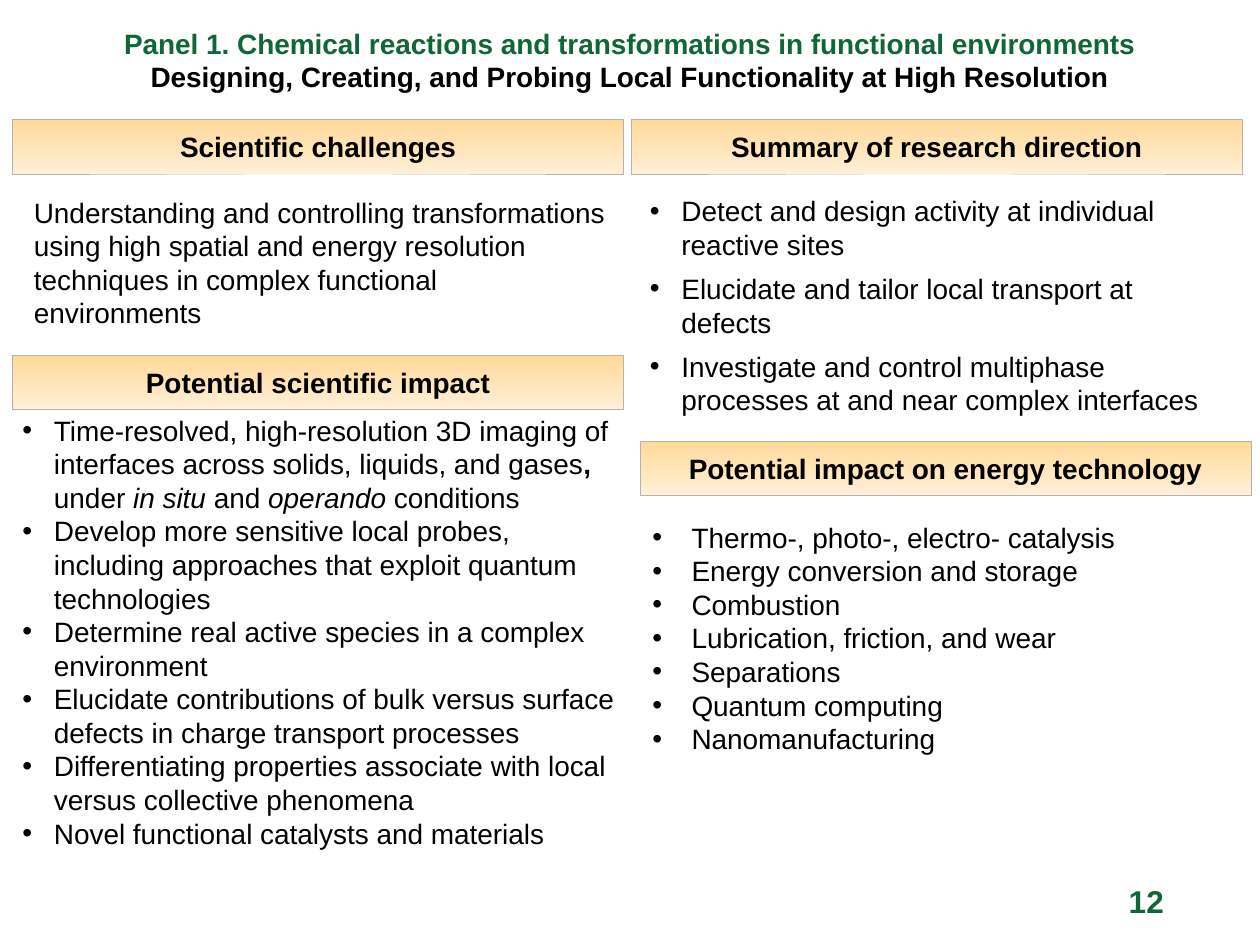
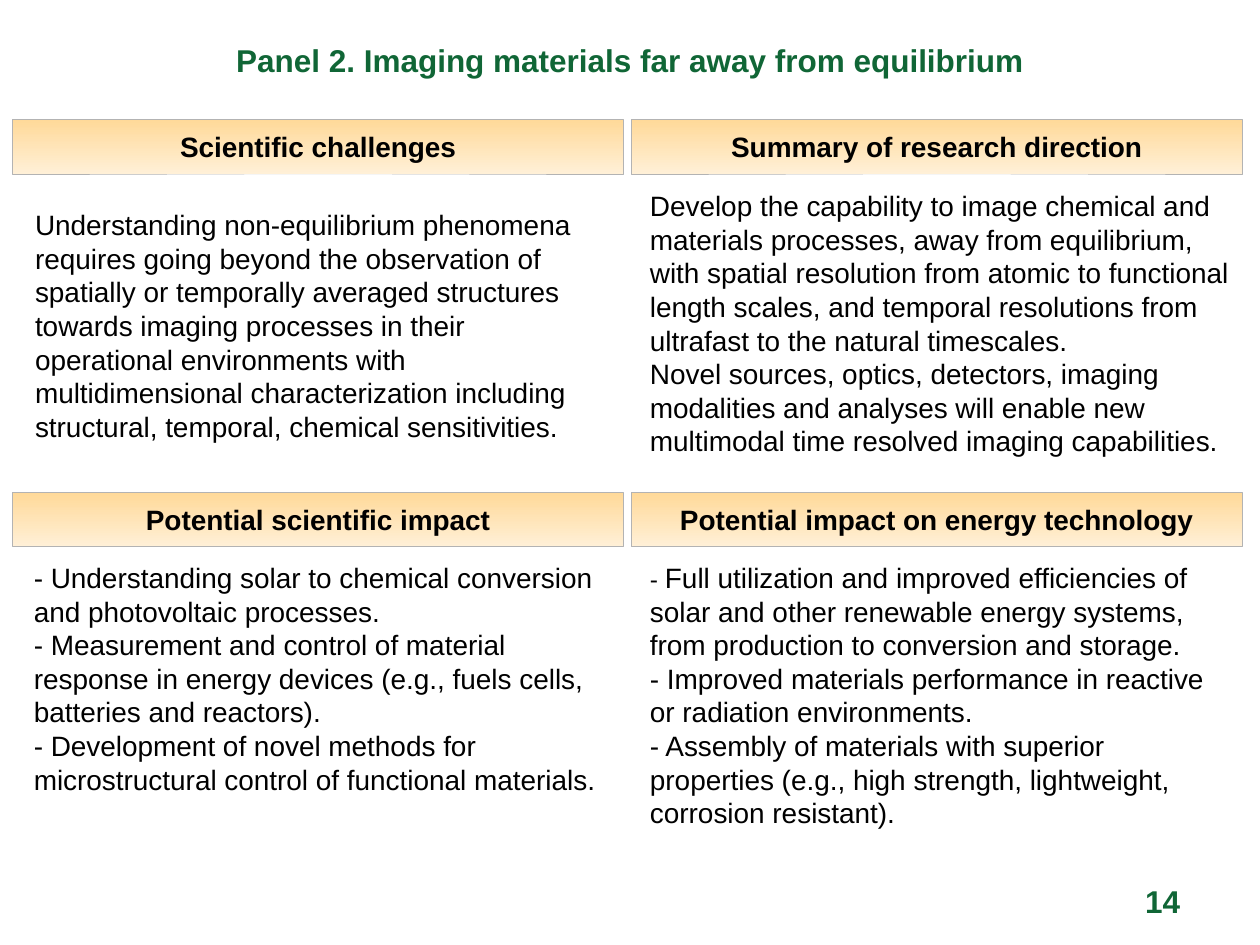
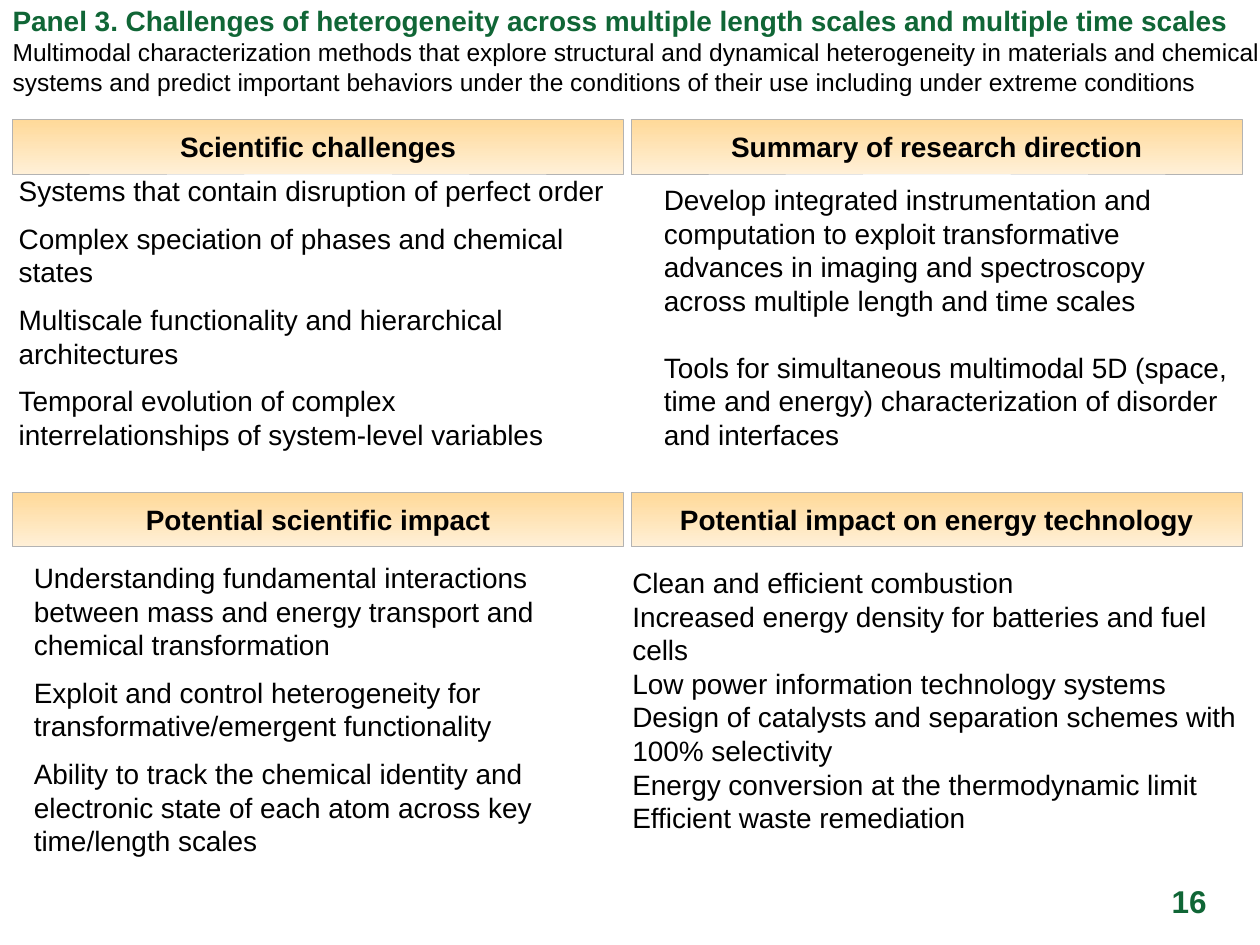
from lxml import etree
from pptx import Presentation
from pptx.dml.color import RGBColor
from pptx.enum.shapes import MSO_SHAPE
from pptx.enum.text import MSO_ANCHOR, MSO_AUTO_SIZE, PP_ALIGN
from pptx.oxml.ns import qn
from pptx.util import Inches, Pt

RECTANGLE = MSO_SHAPE.RECTANGLE
MIDDLE = MSO_ANCHOR.MIDDLE
NO_FIT, GROW = MSO_AUTO_SIZE.NONE, MSO_AUTO_SIZE.SHAPE_TO_FIT_TEXT
LEFT, CENTER = PP_ALIGN.LEFT, PP_ALIGN.CENTER

FONT = "Arial"
BODY_SIZE, SMALL_SIZE, LARGE_SIZE = 16, 14, 18
COLORS = {
    "text": "000000",
    "green": "106636",
    "band_top": "FFD999",
    "band_bottom": "FFF0D7",
    "band_line": "B3B3B3",
}
TITLE_ONLY = 5
LEFT_COLUMN, RIGHT_COLUMN = 0.1, 5.01
TOP_ROW, LOWER_ROW = 0.95, 3.91
BAND_WIDTH, BAND_HEIGHT = 4.85, 0.43
HALF_LINE, FULL_LINE = 8, 19


class PanelDeck:
    """Holds the panel style and the slide being filled."""

    def __init__(self):
        self.presentation = Presentation()
        self.presentation.slide_width = Inches(10)
        self.presentation.slide_height = Inches(7.5)
        self.slide = None

    def color(self, name):
        return RGBColor.from_string(COLORS[name])

    def add_run(self, paragraph, text, size=BODY_SIZE, color="text", bold=False, italic=False):
        run = paragraph.add_run()
        run.text = text
        run.font.name = FONT
        run.font.size = Pt(size)
        run.font.bold = bold
        run.font.italic = italic
        run.font.color.rgb = self.color(color)

    def add_bullet(self, paragraph, indent):
        properties = paragraph._p.get_or_add_pPr()
        properties.set("marL", str(Inches(indent)))
        properties.set("indent", str(-Inches(indent)))
        etree.SubElement(properties, qn("a:buFont")).set("typeface", FONT)
        etree.SubElement(properties, qn("a:buChar")).set("char", "•")

    def start_slide(self, heading, subtitle=None, size=BODY_SIZE, subtitle_style=None,
                    left=0, top=0, width=10, align=CENTER):
        layout = self.presentation.slide_layouts[TITLE_ONLY]
        self.slide = self.presentation.slides.add_slide(layout)
        title = self.slide.shapes.title
        title.left, title.top = Inches(left), Inches(top)
        title.width, title.height = Inches(width), Inches(0.95)
        frame = title.text_frame
        frame.auto_size = NO_FIT
        frame.vertical_anchor = MIDDLE
        paragraph = frame.paragraphs[0]
        paragraph.alignment = align
        self.add_run(paragraph, heading, size, "green", bold=True)
        if subtitle:
            paragraph.add_line_break()
            self.add_run(paragraph, subtitle, **subtitle_style)

    def band(self, text, left, top):
        shape = self.slide.shapes.add_shape(
            RECTANGLE, Inches(left), Inches(top), Inches(BAND_WIDTH), Inches(BAND_HEIGHT))
        shape.shadow.inherit = False
        shape.fill.gradient()
        shape.fill.gradient_angle = 270
        for stop, name in zip(shape.fill.gradient_stops, ("band_top", "band_bottom")):
            stop.color.rgb = self.color(name)
        shape.line.color.rgb = self.color("band_line")
        shape.line.width = Pt(0.25)
        frame = shape.text_frame
        frame.word_wrap = False
        frame.vertical_anchor = MIDDLE
        paragraph = frame.paragraphs[0]
        paragraph.alignment = CENTER
        self.add_run(paragraph, text, bold=True)

    def bands(self, impact_top=LOWER_ROW, energy_left=RIGHT_COLUMN, energy_top=LOWER_ROW):
        self.band("Scientific challenges", LEFT_COLUMN, TOP_ROW)
        self.band("Summary of research direction", RIGHT_COLUMN, TOP_ROW)
        self.band("Potential scientific impact", LEFT_COLUMN, impact_top)
        self.band("Potential impact on energy technology", energy_left, energy_top)

    def text(self, box, paragraphs, bullet=None, before=0, after=0, fit=GROW):
        """Each paragraph is a string or a list of (text, style) runs."""
        shape = self.slide.shapes.add_textbox(*(Inches(length) for length in box))
        frame = shape.text_frame
        frame.word_wrap = True
        frame.auto_size = fit
        for index, content in enumerate(paragraphs):
            paragraph = frame.add_paragraph() if index else frame.paragraphs[0]
            if bullet:
                self.add_bullet(paragraph, bullet)
            if before and index:
                paragraph.space_before = Pt(before)
            if after:
                paragraph.space_after = Pt(after)
            runs = [(content, {})] if isinstance(content, str) else content
            for words, style in runs:
                self.add_run(paragraph, words, **style)

    def page_number(self, number, left, width):
        style = {"size": LARGE_SIZE, "color": "green", "bold": True}
        self.text((left, 6.95, width, 0.4), [[(number, style)]], fit=NO_FIT)


def add_reactions_slide(deck):
    deck.start_slide(
        "Panel 1. Chemical reactions and transformations in functional environments",
        "Designing, Creating, and Probing Local Functionality at High Resolution",
        subtitle_style={"bold": True})
    deck.bands(impact_top=2.82, energy_left=5.08, energy_top=3.5)
    deck.text((0.17, 1.5, 4.75, 1.18), [
        "Understanding and controlling transformations using high spatial and energy "
        "resolution techniques in complex functional environments",
    ])
    deck.text((5.06, 1.49, 4.78, 1.88), [
        "Detect and design activity at individual reactive sites",
        "Elucidate and tailor local transport at defects",
        "Investigate and control multiphase processes at and near complex interfaces",
    ], bullet=0.25, after=6)
    deck.text((0.08, 3.23, 5, 3.6), [
        [("Time-resolved, high-resolution 3D imaging of interfaces across solids, "
          "liquids, and gases", {}),
         (",", {"bold": True}),
         (" under ", {}),
         ("in situ ", {"italic": True}),
         ("and ", {}),
         ("operando", {"italic": True}),
         (" conditions", {})],
        "Develop more sensitive local probes, including approaches that exploit "
        "quantum technologies",
        "Determine real active species in a complex environment",
        "Elucidate contributions of bulk versus surface defects in charge transport processes",
        "Differentiating properties associate with local versus collective phenomena",
        "Novel functional catalysts and materials",
    ], bullet=0.25)
    deck.text((5.08, 4.08, 4.75, 2.26), [
        "Thermo-, photo-, electro- catalysis",
        "Energy conversion and storage",
        "Combustion",
        "Lubrication, friction, and wear",
        "Separations",
        "Quantum computing",
        "Nanomanufacturing",
    ], bullet=0.31)
    deck.page_number("12", 8.86, 0.49)


def add_equilibrium_slide(deck):
    deck.start_slide("Panel 2. Imaging materials far away from equilibrium", size=LARGE_SIZE)
    deck.bands()
    deck.text((0.18, 1.6, 4.66, 1.99), [
        "Understanding non-equilibrium phenomena requires going beyond the observation of "
        "spatially or temporally averaged structures towards imaging processes in their "
        "operational environments with multidimensional characterization including "
        "structural, temporal, chemical sensitivities.",
    ])
    deck.text((5.06, 1.45, 4.86, 2.26), [
        "Develop the capability to image chemical and materials processes, away from "
        "equilibrium, with spatial resolution from atomic to functional length scales, "
        "and temporal resolutions from ultrafast to the natural timescales.",
        "Novel sources, optics, detectors, imaging modalities and analyses will enable "
        "new multimodal time resolved imaging capabilities.",
    ])
    deck.text((0.17, 4.4, 4.66, 2.26), [
        "- Understanding solar to chemical conversion and photovoltaic processes.",
        "- Measurement and control of material response in energy devices (e.g., fuels "
        "cells, batteries and reactors).",
        "- Development of novel methods for microstructural control of functional materials.",
    ])
    deck.text((5.06, 4.4, 4.79, 2.56), [
        [("- ", {"size": SMALL_SIZE}),
         ("Full utilization and improved efficiencies of solar and other renewable energy "
          "systems, from production to conversion and storage.", {})],
        "- Improved materials performance in reactive or radiation environments.",
        "- Assembly of materials with superior properties (e.g., high strength, "
        "lightweight, corrosion resistant).",
    ])
    deck.page_number("14", 8.99, 0.63)


def add_heterogeneity_slide(deck):
    deck.start_slide(
        "Panel 3. Challenges of heterogeneity across multiple length scales and "
        "multiple time scales",
        "Multimodal characterization methods that explore structural and dynamical "
        "heterogeneity in materials and chemical systems and predict important behaviors "
        "under the conditions of their use including under extreme conditions",
        subtitle_style={"size": SMALL_SIZE}, top=-0.08, width=10.25, align=LEFT)
    deck.bands()
    deck.text((0.05, 1.33, 4.89, 2.39), [
        "Systems that contain disruption of perfect order",
        "Complex speciation of phases and chemical states",
        "Multiscale functionality and hierarchical architectures",
        "Temporal evolution of complex interrelationships of system-level variables",
    ], before=HALF_LINE)
    deck.text((5.17, 1.4, 4.69, 2.26), [
        "Develop integrated instrumentation and computation to exploit transformative "
        "advances in imaging and spectroscopy across multiple length and time scales",
        "Tools for simultaneous multimodal 5D (space, time and energy) characterization "
        "of disorder and interfaces",
    ], before=FULL_LINE)
    deck.text((0.17, 4.4, 4.78, 2.52), [
        "Understanding fundamental interactions between mass and energy transport and "
        "chemical transformation",
        "Exploit and control heterogeneity for transformative/emergent functionality",
        "Ability to track the chemical identity and electronic state of each atom across "
        "key time/length scales",
    ], before=HALF_LINE)
    deck.text((4.92, 4.44, 5.25, 2.52), [
        "Clean and efficient combustion",
        "Increased energy density for batteries and fuel cells",
        "Low power information technology systems",
        "Design of catalysts and separation schemes with 100% selectivity",
        "Energy conversion at the thermodynamic limit",
        "Efficient waste remediation",
    ])
    deck.page_number("16", 9.2, 0.61)


def main():
    deck = PanelDeck()
    add_reactions_slide(deck)
    add_equilibrium_slide(deck)
    add_heterogeneity_slide(deck)
    deck.presentation.save("out.pptx")


if __name__ == "__main__":
    main()
